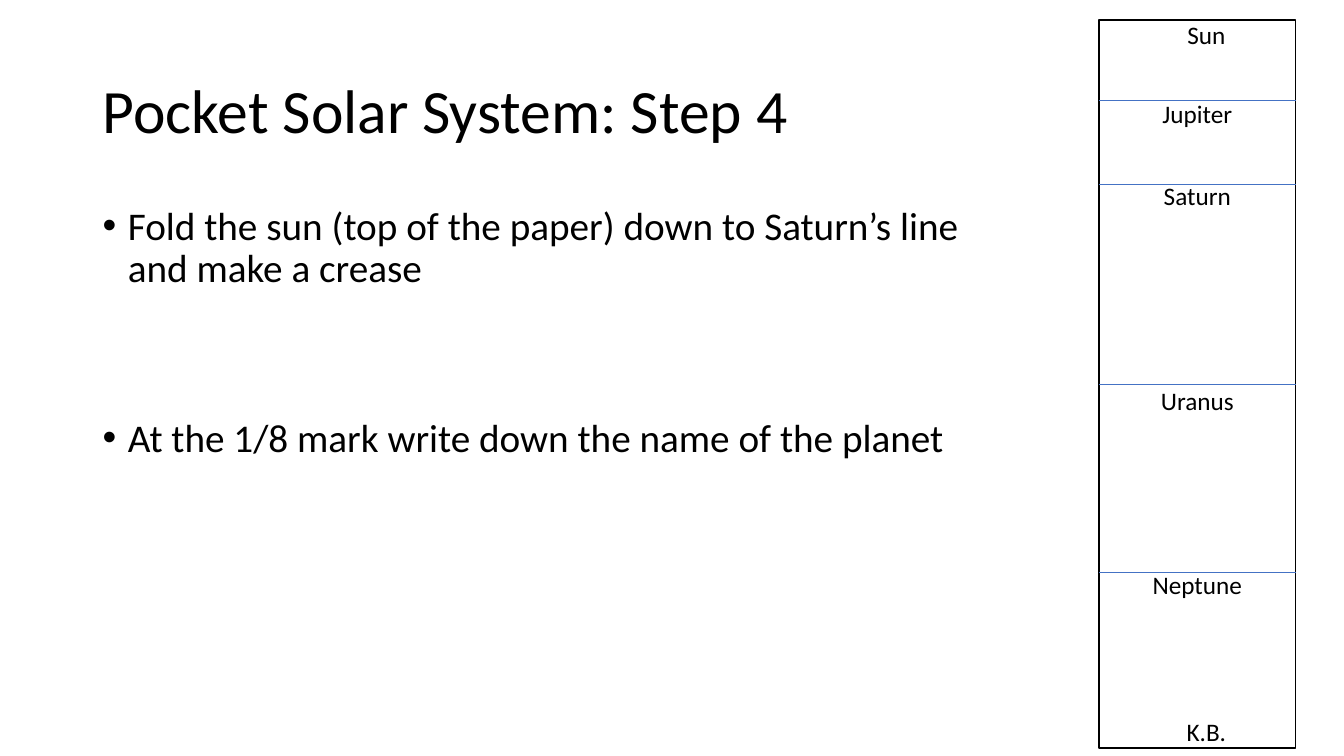
from lxml.etree import SubElement
from pptx import Presentation
from pptx.dml.color import RGBColor
from pptx.enum.shapes import MSO_CONNECTOR, MSO_SHAPE
from pptx.enum.text import MSO_ANCHOR, PP_ALIGN
from pptx.oxml.ns import qn
from pptx.util import Inches, Pt

COLORS = {"text": "000000", "paper": "FFFFFF", "edge": "000000", "crease": "4472C4"}
FONT = "Calibri"
LABEL_HEIGHT = 0.4

# Text and the space before it, in points
STEPS = [
    ("Fold the sun (top of the paper) down to Saturn’s line and make a crease", 10),
    ("At the 1/8 mark write down the name of the planet", 91),
]
# Name, crease as a share of the strip's height, label's rise above its crease
PLANETS = [
    ("Jupiter", 0.11, 0.07),
    ("Saturn", 0.226, 0.09),
    ("Uranus", 0.5, 0.04),
    ("Neptune", 0.759, 0.08),
]


def color(name):
    return RGBColor.from_string(COLORS[name])


def add_text_box(slide, box, anchor=MSO_ANCHOR.TOP, wrap=True):
    frame = slide.shapes.add_textbox(*map(Inches, box)).text_frame
    frame.word_wrap = wrap
    frame.vertical_anchor = anchor
    return frame


def style_paragraph(para, text, size):
    para.text = text
    para.font.name = FONT
    para.font.size = Pt(size)
    para.font.color.rgb = color("text")


def add_bullet(para):
    properties = para._p.get_or_add_pPr()
    properties.set("marL", str(Inches(0.25)))
    properties.set("indent", str(-Inches(0.25)))
    SubElement(properties, qn("a:buFont"), typeface="Arial")
    SubElement(properties, qn("a:buChar"), char="•")


def add_title(slide, box, text):
    para = add_text_box(slide, box, MSO_ANCHOR.MIDDLE).paragraphs[0]
    style_paragraph(para, text, 44)
    para.line_spacing = 0.9


def add_steps(slide, box):
    frame = add_text_box(slide, box)
    for index, (text, space) in enumerate(STEPS):
        para = frame.add_paragraph() if index else frame.paragraphs[0]
        style_paragraph(para, text, 28)
        para.line_spacing = 0.9
        para.space_before = Pt(space)
        add_bullet(para)


def add_label(slide, text, center, top):
    width = 1.1
    box = (center - width / 2, top, width, LABEL_HEIGHT)
    para = add_text_box(slide, box, wrap=False).paragraphs[0]
    style_paragraph(para, text, 18)
    para.alignment = PP_ALIGN.CENTER


def add_crease(slide, strip, box, share):
    left, top, width, height = box
    y = top + share * height
    crease = slide.shapes.add_connector(
        MSO_CONNECTOR.STRAIGHT, *map(Inches, (left, y, left + width, y)))
    if share == 0.5:
        crease.begin_connect(strip, 1)
        crease.end_connect(strip, 3)
    crease.line.color.rgb = color("crease")
    crease.line.width = Pt(0.5)
    SubElement(crease._element.spPr, qn("a:effectLst"))


def add_paper_strip(slide, box):
    """Draw the folded strip with its creases, planets and two end labels."""
    left, top, width, height = box
    center = left + width / 2
    strip = slide.shapes.add_shape(MSO_SHAPE.RECTANGLE, *map(Inches, box))
    strip.shadow.inherit = False
    strip.fill.solid()
    strip.fill.fore_color.rgb = color("paper")
    strip.line.color.rgb = color("edge")
    strip.line.width = Pt(1)

    add_label(slide, "Sun", center + 0.09, top - 0.06)
    add_label(slide, "K.B.", center + 0.09, top + height + 0.04 - LABEL_HEIGHT)
    for name, share, rise in PLANETS:
        add_crease(slide, strip, box, share)
        add_label(slide, name, center, top + share * height - rise)


def main():
    deck = Presentation()
    deck.slide_width, deck.slide_height = Inches(13.33), Inches(7.5)
    slide = deck.slides.add_slide(deck.slide_layouts[6])
    add_title(slide, (0.92, 0.4, 11.5, 1.45), "Pocket Solar System: Step 4")
    add_steps(slide, (0.92, 2, 8.74, 4.76))
    add_paper_strip(slide, (10.9, 0.2, 1.95, 7.22))
    deck.save("out.pptx")


if __name__ == "__main__":
    main()
